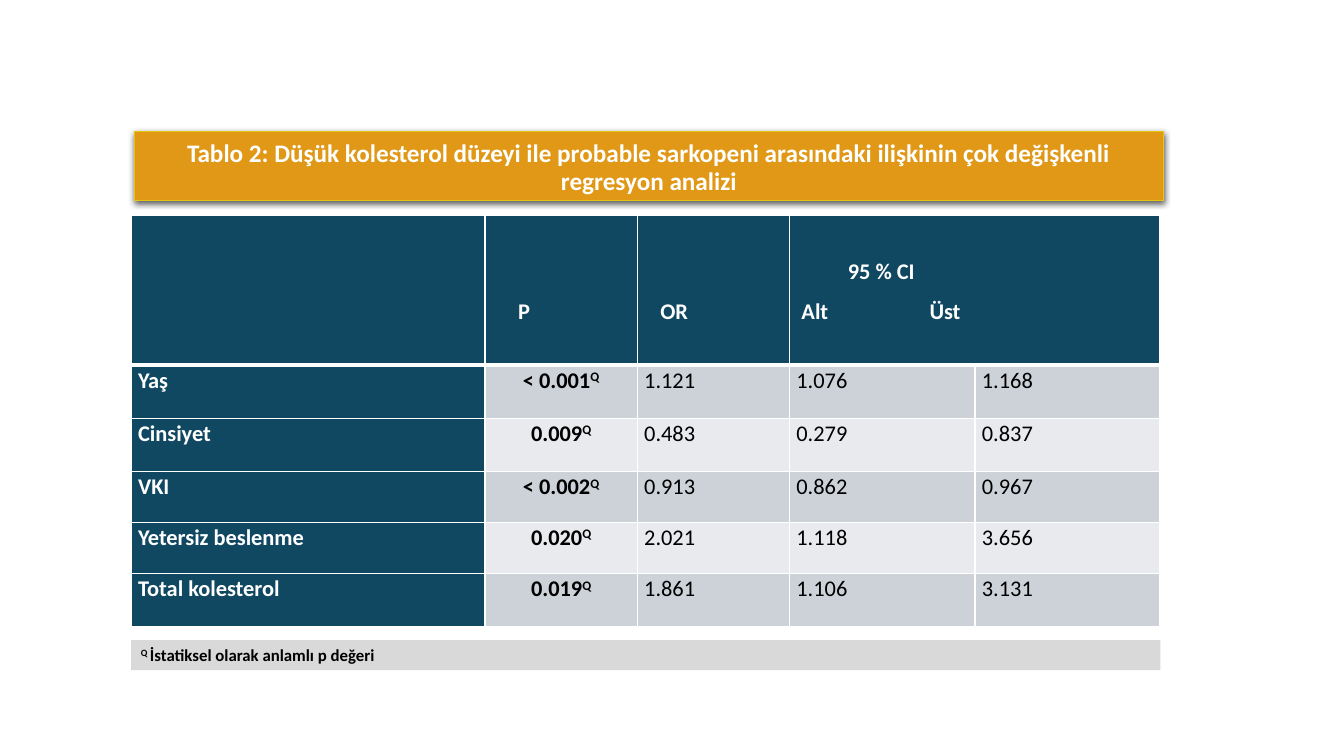
from dataclasses import dataclass

from lxml.etree import SubElement
from pptx import Presentation
from pptx.dml.color import RGBColor
from pptx.enum.shapes import MSO_SHAPE
from pptx.enum.text import MSO_ANCHOR, MSO_AUTO_SIZE, PP_ALIGN
from pptx.oxml.ns import qn
from pptx.util import Inches, Pt


@dataclass(frozen=True)
class Theme:
    font: str = "Calibri"
    white: RGBColor = RGBColor.from_string("FFFFFF")
    black: RGBColor = RGBColor.from_string("000000")
    navy: RGBColor = RGBColor.from_string("104862")
    orange: RGBColor = RGBColor.from_string("E09816")
    gold: RGBColor = RGBColor.from_string("E4C612")
    grey: RGBColor = RGBColor.from_string("D9D9D9")
    bands: tuple = (RGBColor.from_string("CCD2D8"), RGBColor.from_string("E8EAED"))
    title_size: int = 18
    table_size: int = 16
    note_size: int = 12


theme = Theme()


def style_span(span, size, color, bold=True, raised=False):
    span.font.name = theme.font
    span.font.size = Pt(size)
    span.font.color.rgb = color
    span.font.bold = bold
    if raised:
        span.font._element.set("baseline", "30000")


def add_borders(cell, bottom):
    """Draw white cell borders; bottom is the width of the lower one in points."""
    properties = cell._tc.get_or_add_tcPr()
    for side, width in (("L", 1), ("R", 1), ("T", 1), ("B", bottom)):
        line = SubElement(properties, qn(f"a:ln{side}"), w=str(Pt(width)))
        fill = SubElement(line, qn("a:solidFill"))
        SubElement(fill, qn("a:srgbClr"), val=str(theme.white))


deck = Presentation()
deck.slide_width, deck.slide_height = Inches(13.33), Inches(7.5)
slide = deck.slides.add_slide(deck.slide_layouts[5])

# Title bar
title = slide.shapes.title
title.left, title.top = Inches(1.33), Inches(1.3)
title.width, title.height = Inches(10.21), Inches(0.69)
title.fill.solid()
title.fill.fore_color.rgb = theme.orange
title.line.color.rgb = theme.gold
title.line.width = Pt(0.75)
effects = SubElement(title._element.spPr, qn("a:effectLst"))
shadow = SubElement(effects, qn("a:outerShdw"), blurRad=str(Pt(4.5)),
                    dist=str(Pt(1.5)), dir="5400000", rotWithShape="0")
shadow_color = SubElement(shadow, qn("a:srgbClr"), val=str(theme.black))
SubElement(shadow_color, qn("a:alpha"), val="63000")
frame = title.text_frame
frame.text = ("Tablo 2: Düşük kolesterol düzeyi ile probable sarkopeni arasındaki "
              "ilişkinin çok değişkenli regresyon analizi")
frame.auto_size = MSO_AUTO_SIZE.NONE
frame.word_wrap = True
frame.vertical_anchor = MSO_ANCHOR.BOTTOM
para = frame.paragraphs[0]
para.alignment = PP_ALIGN.CENTER
para.line_spacing = 0.9
style_span(para.runs[0], theme.title_size, theme.white)

# Regression table
column_widths = (3.51, 1.51, 1.51, 1.84, 1.83)
row_heights = (1.48, 0.53, 0.53, 0.5, 0.51, 0.53)
rows = (
    ("", "P", "OR", "95 % CI\nAlt\tÜst", ""),
    ("Yaş", "< 0.001", "1.121", "1.076", "1.168"),
    ("Cinsiyet", "0.009", "0.483", "0.279", "0.837"),
    ("VKI", "< 0.002", "0.913", "0.862", "0.967"),
    ("Yetersiz beslenme", "0.020", "2.021", "1.118", "3.656"),
    ("Total kolesterol", "0.019", "1.861", "1.106", "3.131"),
)
header_insets = ((0.07, 0), (0.33, 0.8), (0.23, 0.8), (0.12, 0.4), (0.07, 0))

table = slide.shapes.add_table(len(rows), len(column_widths), Inches(1.3), Inches(2.14),
                               Inches(sum(column_widths)), Inches(sum(row_heights))).table
for column, width in zip(table.columns, column_widths):
    column.width = Inches(width)
for row, height in zip(table.rows, row_heights):
    row.height = Inches(height)
table.cell(0, 3).merge(table.cell(0, 4))

for r, values in enumerate(rows):
    for c, value in enumerate(values):
        cell = table.cell(r, c)
        is_heading = r == 0 or c == 0
        left, top = header_insets[c] if r == 0 else (0.07, 0)
        cell.margin_left, cell.margin_top = Inches(left), Inches(top)
        cell.margin_right, cell.margin_bottom = Inches(0.07), 0
        add_borders(cell, bottom=3 if r == 0 else 1)
        cell.fill.solid()
        cell.fill.fore_color.rgb = theme.navy if is_heading else theme.bands[(r - 1) % 2]
        if not value:
            continue
        cell.text_frame.text = value
        color = theme.white if is_heading else theme.black
        for para in cell.text_frame.paragraphs:
            para.line_spacing = 1.07
            para.space_after = Pt(8)
            for span in para.runs:
                style_span(span, theme.table_size, color, bold=is_heading or c == 1)
        if r > 0 and c == 1:
            para.alignment = PP_ALIGN.CENTER
            mark = para.add_run()
            mark.text = "Q"
            style_span(mark, theme.table_size, color, raised=True)

# Interval heading: indented first line, limits set apart by a tab
interval, limits = table.cell(0, 3).text_frame.paragraphs
interval._p.get_or_add_pPr().set("marL", str(Inches(0.46)))
tabs = SubElement(limits._p.get_or_add_pPr(), qn("a:tabLst"))
SubElement(tabs, qn("a:tab"), pos=str(Inches(1.27)), algn="l")

# Footnote bar
note = slide.shapes.add_shape(MSO_SHAPE.RECTANGLE, Inches(1.3), Inches(6.35),
                              Inches(10.21), Inches(0.3))
note.shadow.inherit = False
note.fill.solid()
note.fill.fore_color.rgb = theme.grey
note.line.fill.background()
note.text_frame.word_wrap = True
para = note.text_frame.paragraphs[0]
para.alignment = PP_ALIGN.LEFT
for text, raised in (("Q ", True), ("İstatiksel olarak anlamlı p değeri", False)):
    span = para.add_run()
    span.text = text
    style_span(span, theme.note_size, theme.black, raised=raised)

deck.save("out.pptx")
